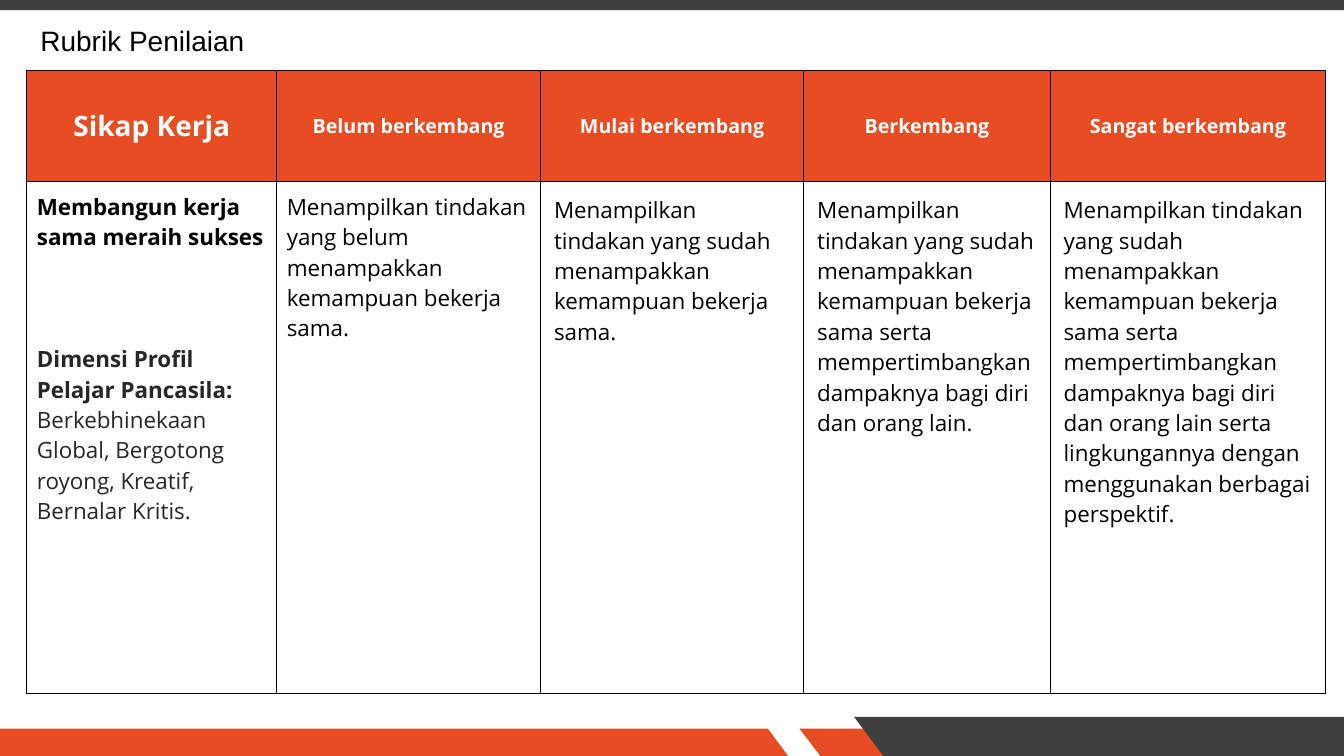
from lxml import etree
from pptx import Presentation
from pptx.dml.color import RGBColor
from pptx.enum.shapes import MSO_SHAPE
from pptx.enum.text import MSO_ANCHOR, MSO_AUTO_SIZE, PP_ALIGN
from pptx.oxml.ns import qn
from pptx.util import Pt

ORANGE = RGBColor(0xE8, 0x4C, 0x22)
CHARCOAL = RGBColor(0x3F, 0x3F, 0x3F)
INK = RGBColor(0x27, 0x27, 0x23)
BLACK = RGBColor(0, 0, 0)
WHITE = RGBColor(0xFF, 0xFF, 0xFF)

SLIDE_WIDTH, SLIDE_HEIGHT = 960, 540
WIDE_INSET, NARROW_INSET = 9.6, 7.2

COLUMN_WIDTHS = [178.5, 188.5, 188, 176, 197]
ROW_HEIGHTS = [79.2, 366]
LEVELS = ["Belum berkembang", "Mulai berkembang", "Berkembang", "Sangat berkembang"]
WORKING_TOGETHER = "Menampilkan tindakan yang sudah menampakkan kemampuan bekerja sama"
CONSIDERATE = WORKING_TOGETHER + " serta mempertimbangkan dampaknya bagi diri dan orang lain"
DESCRIPTIONS = [
    "Menampilkan tindakan yang belum menampakkan kemampuan bekerja sama.",
    WORKING_TOGETHER + ".",
    CONSIDERATE + ".",
    CONSIDERATE + " serta lingkungannya dengan menggunakan berbagai perspektif.",
]


def write(paragraph, text, size=16, color=BLACK, bold=False, font="Open Sans",
          align=PP_ALIGN.LEFT, before=0):
    paragraph.alignment = align
    paragraph.space_before = Pt(before)
    run = paragraph.add_run()
    run.text = text
    run.font.name = font
    run.font.size = Pt(size)
    run.font.bold = bold
    run.font.color.rgb = color


def paint(shape, color):
    shape.shadow.inherit = False
    shape.fill.solid()
    shape.fill.fore_color.rgb = color
    shape.line.fill.background()


def set_insets(holder, inset):
    holder.margin_left = holder.margin_right = Pt(inset)
    holder.margin_top = holder.margin_bottom = Pt(inset)


def add_title(slide, left, top, width, height):
    title = slide.shapes.title
    title.left, title.top, title.width, title.height = map(Pt, (left, top, width, height))
    frame = title.text_frame
    frame.word_wrap = True
    frame.auto_size = MSO_AUTO_SIZE.NONE
    frame.vertical_anchor = MSO_ANCHOR.TOP
    set_insets(frame, WIDE_INSET)
    write(frame.paragraphs[0], "Rubrik Penilaian", size=20, font="Arial")


def add_top_bar(slide, left, top, width, height):
    bar = slide.shapes.add_shape(MSO_SHAPE.RECTANGLE, *map(Pt, (left, top, width, height)))
    paint(bar, CHARCOAL)


def add_footer(slide, left, top, width, height):
    """Draw three slanted strips; each is given by its top edge, foot edge and drop."""
    strips = [
        (571, 646.5, 586, 646.5, 8.5, ORANGE),
        (0, 548.5, 0, 563, 8.5, ORANGE),
        (610, width, 631, width, 0, CHARCOAL),
    ]
    bottom = top + height
    for top_left, top_right, foot_left, foot_right, drop, color in strips:
        corners = [(top_left, top + drop), (top_right, top + drop),
                   (foot_right, bottom), (foot_left, bottom)]
        points = [(Pt(left + x), Pt(y)) for x, y in corners]
        outline = slide.shapes.build_freeform(*points[0])
        outline.add_line_segments(points[1:], close=True)
        paint(outline.convert_to_shape(), color)


def add_borders(cell):
    properties = cell._tc.get_or_add_tcPr()
    for index, side in enumerate(("a:lnL", "a:lnR", "a:lnT", "a:lnB")):
        line = etree.SubElement(properties, qn(side), w=str(Pt(0.75)))
        fill = etree.SubElement(line, qn("a:solidFill"))
        etree.SubElement(fill, qn("a:srgbClr"), val=str(BLACK))
        properties.insert(index, line)


def format_cell(cell, inset, anchor=MSO_ANCHOR.TOP, color=None):
    set_insets(cell, inset)
    cell.vertical_anchor = anchor
    if color is None:
        cell.fill.background()
    else:
        cell.fill.solid()
        cell.fill.fore_color.rgb = color
    add_borders(cell)


def fill_attitude(cell):
    format_cell(cell, NARROW_INSET)
    frame = cell.text_frame
    write(frame.paragraphs[0], "Membangun kerja sama meraih sukses", bold=True)
    profile = frame.add_paragraph()
    write(profile, "Dimensi Profil Pelajar Pancasila: ", color=INK, bold=True, before=65.4)
    write(profile, "Berkebhinekaan Global, Bergotong royong, Kreatif, Bernalar Kritis.",
          color=INK, before=65.4)


def add_rubric(slide, left, top, width, height):
    table = slide.shapes.add_table(len(ROW_HEIGHTS), len(COLUMN_WIDTHS),
                                   *map(Pt, (left, top, width, height))).table
    table.first_row = table.horz_banding = False
    for column, column_width in zip(table.columns, COLUMN_WIDTHS):
        column.width = Pt(column_width)
    for row, row_height in zip(table.rows, ROW_HEIGHTS):
        row.height = Pt(row_height)

    for index, heading in enumerate(["Sikap Kerja"] + LEVELS):
        cell = table.cell(0, index)
        format_cell(cell, WIDE_INSET, MSO_ANCHOR.MIDDLE, ORANGE)
        write(cell.text_frame.paragraphs[0], heading, size=14 if index else 20,
              color=WHITE, bold=True, align=PP_ALIGN.CENTER)

    fill_attitude(table.cell(1, 0))
    for index, description in enumerate(DESCRIPTIONS, start=1):
        cell = table.cell(1, index)
        format_cell(cell, NARROW_INSET if index == 1 else WIDE_INSET)
        write(cell.text_frame.paragraphs[0], description)


def main():
    deck = Presentation()
    deck.slide_width, deck.slide_height = Pt(SLIDE_WIDTH), Pt(SLIDE_HEIGHT)
    slide = deck.slides.add_slide(deck.slide_layouts[5])
    add_footer(slide, 0, 512, SLIDE_WIDTH, 28)
    add_top_bar(slide, 0, 0, SLIDE_WIDTH, 7.2)
    add_title(slide, 19.2, 7.2, 927.5, 44)
    add_rubric(slide, 19.2, 50.4, sum(COLUMN_WIDTHS), sum(ROW_HEIGHTS))
    deck.save("out.pptx")


if __name__ == "__main__":
    main()
